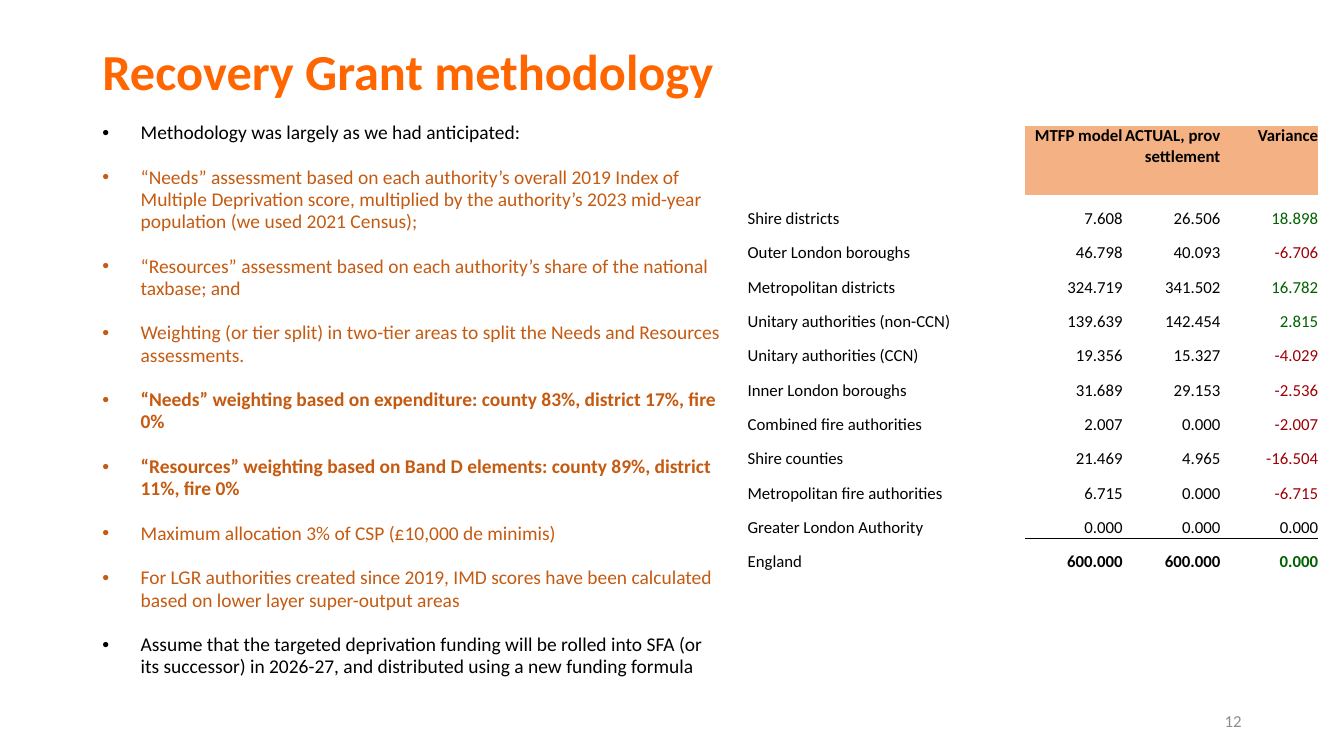
from lxml import etree
from pptx import Presentation
from pptx.dml.color import RGBColor
from pptx.enum.text import MSO_ANCHOR, PP_ALIGN
from pptx.oxml.ns import qn
from pptx.util import Inches, Pt

LEFT, RIGHT = PP_ALIGN.LEFT, PP_ALIGN.RIGHT
TOP, MIDDLE, BOTTOM = MSO_ANCHOR.TOP, MSO_ANCHOR.MIDDLE, MSO_ANCHOR.BOTTOM

ORANGE = RGBColor(0xFF, 0x66, 0x00)
RUST = RGBColor(0xC5, 0x5A, 0x11)
PEACH = RGBColor(0xF4, 0xB1, 0x83)
BLACK = RGBColor(0x00, 0x00, 0x00)
GREY = RGBColor(0x8C, 0x8C, 0x8C)
GREEN = RGBColor(0x00, 0x61, 0x00)
RED = RGBColor(0x9C, 0x00, 0x06)

FONT = "Calibri"
UNIT = Inches(13.33) / 160  # the slide is a grid of 160 columns by 90 rows
NO_STYLE = "{2D5ABB26-0587-4C30-8999-92F81FD0307C}"

# Text, colour, bold
BULLETS = [
    ("Methodology was largely as we had anticipated:", BLACK, False),
    ("“Needs” assessment based on each authority’s overall 2019 Index of Multiple "
     "Deprivation score, multiplied by the authority’s 2023 mid-year population "
     "(we used 2021 Census);", RUST, False),
    ("“Resources” assessment based on each authority’s share of the national "
     "taxbase; and", RUST, False),
    ("Weighting (or tier split) in two-tier areas to split the Needs and Resources "
     "assessments.", RUST, False),
    ("“Needs” weighting based on expenditure: county 83%, district 17%, fire 0%",
     RUST, True),
    ("“Resources” weighting based on Band D elements: county 89%, district 11%, "
     "fire 0%", RUST, True),
    ("Maximum allocation 3% of CSP (£10,000 de minimis)", RUST, False),
    ("For LGR authorities created since 2019, IMD scores have been calculated based "
     "on lower layer super-output areas", RUST, False),
    ("Assume that the targeted deprivation funding will be rolled into SFA (or its "
     "successor) in 2026-27, and distributed using a new funding formula",
     BLACK, False),
]

HEADERS = ["MTFP model", "ACTUAL, prov settlement", "Variance"]
GRANTS = [
    ("Shire districts", 7.608, 26.506, 18.898),
    ("Outer London boroughs", 46.798, 40.093, -6.706),
    ("Metropolitan districts", 324.719, 341.502, 16.782),
    ("Unitary authorities (non-CCN)", 139.639, 142.454, 2.815),
    ("Unitary authorities (CCN)", 19.356, 15.327, -4.029),
    ("Inner London boroughs", 31.689, 29.153, -2.536),
    ("Combined fire authorities", 2.007, 0, -2.007),
    ("Shire counties", 21.469, 4.965, -16.504),
    ("Metropolitan fire authorities", 6.715, 0, -6.715),
    ("Greater London Authority", 0, 0, 0),
    ("England", 600, 600, 0),
]


def grid(units):
    return round(units * UNIT)


def add_run(p, text, size, color, bold=False):
    r = p.add_run()
    r.text = text
    r.font.name, r.font.size = FONT, Pt(size)
    r.font.bold, r.font.color.rgb = bold, color


def add_box(s, col, row, cols, rows, anchor=TOP):
    tf = s.shapes.add_textbox(*map(grid, (col, row, cols, rows))).text_frame
    tf.word_wrap = True
    tf.vertical_anchor = anchor
    return tf


def add_bullets(tf, items, size):
    for i, (text, color, bold) in enumerate(items):
        p = tf.paragraphs[0] if i == 0 else tf.add_paragraph()
        p.line_spacing = 0.95
        p.space_before = Pt(10 if i else 0)
        p.space_after = Pt(6)
        pPr = p._p.get_or_add_pPr()
        pPr.set("marL", str(Inches(0.38)))
        pPr.set("indent", str(-Inches(0.38)))
        etree.SubElement(pPr, qn("a:buFont"), typeface="Arial")
        etree.SubElement(pPr, qn("a:buChar"), char="•")
        add_run(p, text, size, color, bold)


def fill_cell(cell, text="", align=RIGHT, color=BLACK, bold=False, anchor=BOTTOM,
              fill=None):
    cell.margin_left = cell.margin_right = cell.margin_top = cell.margin_bottom = 0
    cell.vertical_anchor = anchor
    if fill is None:
        cell.fill.background()
    else:
        cell.fill.solid()
        cell.fill.fore_color.rgb = fill
    if text:
        p = cell.text_frame.paragraphs[0]
        p.alignment = align
        add_run(p, text, 12, color, bold)


def add_border(cell, side):
    ln = etree.Element(qn(f"a:{side}"), w=str(Pt(0.5)))
    solid = etree.SubElement(ln, qn("a:solidFill"))
    etree.SubElement(solid, qn("a:srgbClr"), val=str(BLACK))
    cell._tc.get_or_add_tcPr().insert(0, ln)


def variance_color(value, is_total):
    if value < 0:
        return RED
    return GREEN if value > 0 or is_total else BLACK


def add_grant_table(s, col, row, widths, header_height, row_height):
    heights = [header_height] + [row_height] * len(GRANTS)
    frame = s.shapes.add_table(len(heights), len(widths), grid(col), grid(row),
                               grid(sum(widths)), grid(sum(heights)))
    table = frame.table
    table.first_row = table.horz_banding = False
    table._tbl.tblPr.find(qn("a:tableStyleId")).text = NO_STYLE
    for column, width in zip(table.columns, widths):
        column.width = grid(width)
    for table_row, height in zip(table.rows, heights):
        table_row.height = grid(height)

    # Header row
    fill_cell(table.cell(0, 0))
    for j, header in enumerate(HEADERS, 1):
        fill_cell(table.cell(0, j), header, bold=True, anchor=TOP, fill=PEACH)

    # Authority rows, then the total
    total = len(GRANTS)
    for i, (name, *values) in enumerate(GRANTS, 1):
        fill_cell(table.cell(i, 0), name, LEFT)
        for j, value in enumerate(values, 1):
            color = variance_color(value, i == total) if j == 3 else BLACK
            fill_cell(table.cell(i, j), f"{value:.3f}", color=color, bold=i == total)

    # Rule above the total
    for j in range(1, len(widths)):
        add_border(table.cell(total - 1, j), "lnB")
        add_border(table.cell(total, j), "lnT")


def main():
    prs = Presentation()
    prs.slide_width, prs.slide_height = Inches(13.33), Inches(7.5)
    s = prs.slides.add_slide(prs.slide_layouts[6])

    # Title
    p = add_box(s, 11, 4.92, 138, 7.92, MIDDLE).paragraphs[0]
    p.line_spacing = 0.9
    add_run(p, "Recovery Grant methodology", 36, ORANGE, True)

    # Methodology
    add_bullets(add_box(s, 11, 13.92, 76.56, 74.28), BULLETS, 13.9)

    # Grant comparison
    add_grant_table(s, 89, 15, [33, 11.64, 11.64, 11.64], 8.18, 4.09)

    # Slide number
    p = add_box(s, 113, 83.4, 36, 4.8, MIDDLE).paragraphs[0]
    p.alignment = RIGHT
    add_run(p, "12", 12, GREY)

    prs.save("out.pptx")


if __name__ == "__main__":
    main()
